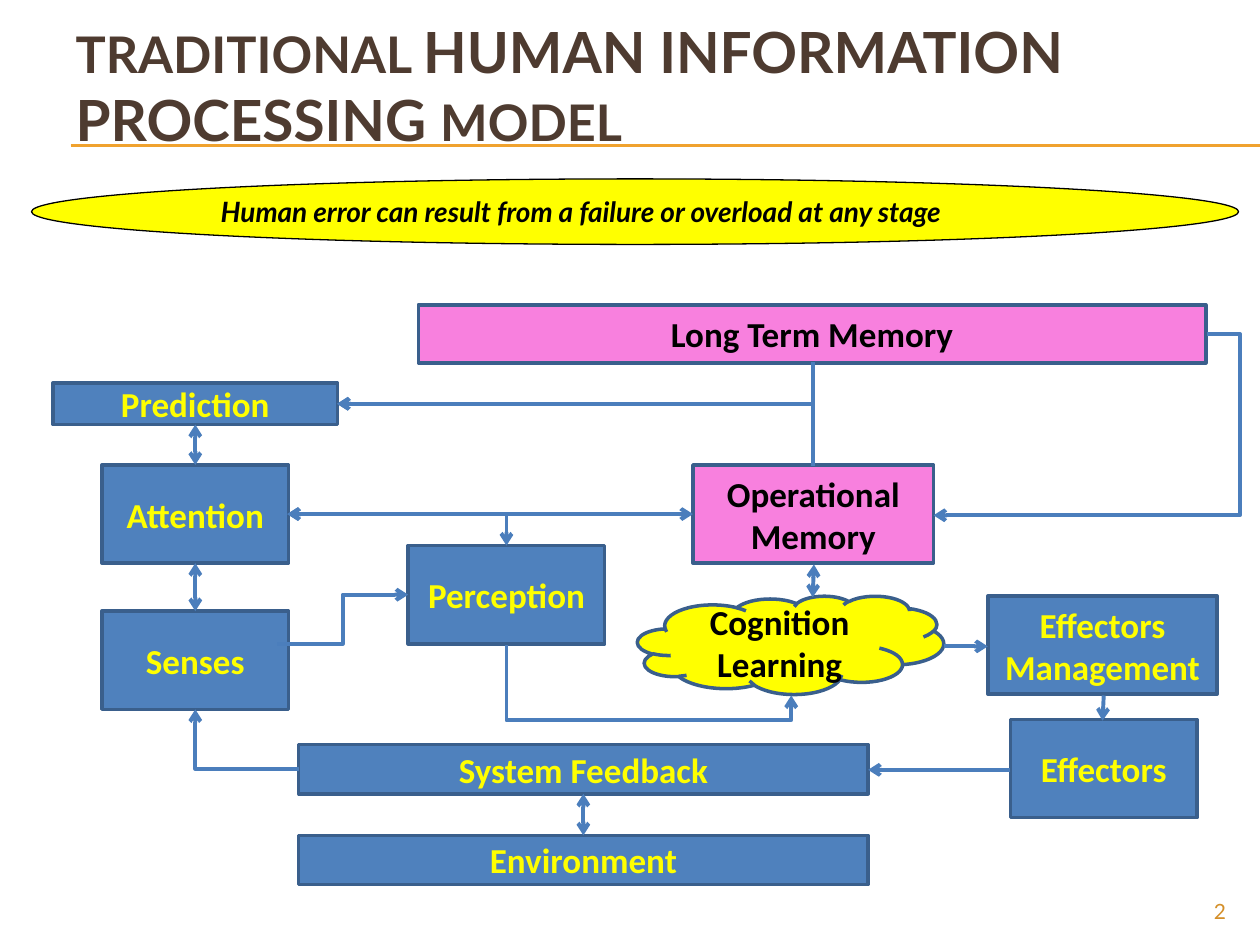
from pptx import Presentation
from pptx.util import Inches, Pt
from pptx.dml.color import RGBColor
from pptx.enum.shapes import MSO_SHAPE as SHAPE, MSO_CONNECTOR as LINK
from pptx.enum.text import PP_ALIGN as ALIGN, MSO_ANCHOR as ANCHOR, MSO_AUTO_SIZE as FIT
from pptx.oxml.ns import qn
from lxml.etree import SubElement

BLUE = RGBColor(0x4F, 0x81, 0xBD)
EDGE = RGBColor(0x3A, 0x5F, 0x8C)
WIRE = RGBColor(0x4B, 0x7E, 0xBC)
PINK = RGBColor(0xF8, 0x80, 0xDE)
YELLOW = RGBColor(0xFF, 0xFF, 0x00)
BLACK = RGBColor(0, 0, 0)
BROWN = RGBColor(0x4E, 0x3B, 0x30)
GOLD = RGBColor(0xF0, 0xA2, 0x2E)
OCHRE = RGBColor(0xD4, 0x8F, 0x29)

TITLE = [("TRADITIONAL ", 28.8), ("HUMAN INFORMATION PROCESSING ", 32.4), ("MODEL", 28.8)]
NOTE = "Human error can result from a failure or overload at any stage"

BOXES = [
    ("Senses", 0.81, 4.85, 1.48, 0.78, BLUE),
    ("Perception", 3.24, 4.33, 1.56, 0.78, BLUE),
    ("Cognition\nLearning", 5.06, 4.73, 2.43, 0.78, YELLOW),
    ("Attention", 0.81, 3.69, 1.48, 0.78, BLUE),
    ("Operational\nMemory", 5.5, 3.69, 1.91, 0.78, PINK),
    ("Long Term Memory", 3.32, 2.42, 6.25, 0.46, PINK),
    ("Effectors\nManagement", 7.84, 4.73, 1.82, 0.78, BLUE),
    ("Effectors", 8.02, 5.71, 1.48, 0.78, BLUE),
    ("System Feedback", 2.37, 5.91, 4.52, 0.39, BLUE),
    ("Environment", 2.37, 6.63, 4.52, 0.39, BLUE),
    ("Prediction", 0.42, 3.04, 2.26, 0.33, BLUE),
]

ONE, BOTH = ("tail",), ("head", "tail")
ARROWS = [
    (7.49, 5.13, 7.84, 5.13, ONE),
    (2.28, 4.08, 5.5, 4.08, BOTH),
    (6.45, 4.74, 6.46, 4.48, BOTH),
    (1.55, 4.47, 1.55, 4.85, BOTH),
    (8.76, 5.52, 8.75, 5.72, ONE),
    (8.02, 6.11, 6.89, 6.11, ONE),
    (4.63, 6.63, 4.63, 6.3, BOTH),
    (1.55, 3.69, 1.55, 3.37, BOTH),
]

BENDS = [
    (1.55, 5.63, 0.82, 0.47, dict(turn=180)),
    (2.28, 4.08, 1.74, 0.25, dict(ends=BOTH)),
    (7.41, 2.65, 2.17, 1.44, dict(flip="h", mid=-0.12)),
    (4.95, 4.19, 0.4, 2.26, dict(turn=270, flip="h", mid=1.49)),
    (2.2, 4.72, 1.04, 0.39, dict(flip="v", mid=0.5)),
    (4.32, 1.56, 0.49, 3.78, dict(turn=270, flip="v")),
    (4.4, 1.15, 0.33, 3.78, dict(turn=90)),
]


def write(frame, runs, font="Calibri", color=BLACK, bold=True, italic=False,
          align=ALIGN.CENTER, anchor=ANCHOR.MIDDLE):
    frame.word_wrap = True
    frame.auto_size = FIT.NONE
    frame.vertical_anchor = anchor
    para = frame.paragraphs[0]
    para.alignment = align
    for text, size in runs:
        for i, part in enumerate(text.split("\n")):
            if i:
                para = frame.add_paragraph()
                para.alignment = align
            run = para.add_run()
            run.text = part
            face = run.font
            face.name, face.size = font, Pt(size)
            face.bold, face.italic = bold, italic
            face.color.rgb = color


def block(slide, kind, box, fill, edge, width):
    shape = slide.shapes.add_shape(kind, *map(Inches, box))
    shape.shadow.inherit = False
    shape.fill.solid()
    shape.fill.fore_color.rgb = fill
    shape.line.color.rgb = edge
    shape.line.width = Pt(width)
    return shape.text_frame


def link(slide, kind, pts, color=WIRE, width=2.25, ends=()):
    wire = slide.shapes.add_connector(kind, *map(Inches, pts))
    wire.line.color.rgb = color
    wire.line.width = Pt(width)
    props = wire._element.spPr
    for end in ends:
        SubElement(props.find(qn("a:ln")), qn(f"a:{end}End"), type="arrow")
    SubElement(props, qn("a:effectLst"))
    return props


def bend(slide, x, y, w, h, turn=0, flip="", mid=None, ends=ONE):
    x1, x2 = (x + w, x) if flip == "h" else (x, x + w)
    y1, y2 = (y + h, y) if flip == "v" else (y, y + h)
    props = link(slide, LINK.ELBOW, (x1, y1, x2, y2), ends=ends)
    props.find(qn("a:xfrm")).set("rot", str(turn * 60000))
    geom = props.find(qn("a:prstGeom"))
    if mid is None:
        geom.set("prst", "bentConnector2")
    else:
        SubElement(geom.find(qn("a:avLst")), qn("a:gd"), name="adj1",
                   fmla=f"val {round(mid * 100000)}")


def main():
    deck = Presentation()
    deck.slide_width, deck.slide_height = Inches(10), Inches(7.5)
    slide = deck.slides.add_slide(deck.slide_layouts[5])

    for y in (1.15, 1.16):
        link(slide, LINK.STRAIGHT, (0.56, y, 10, y), GOLD, 0.75)

    title = slide.shapes.title
    title.left, title.top, title.width, title.height = map(Inches, (0.5, 0.17, 9, 1))
    write(title.text_frame, TITLE, font="Lato", color=BROWN, align=ALIGN.LEFT)

    page = slide.shapes.add_textbox(*map(Inches, (9, 7.08, 0.83, 0.27)))
    write(page.text_frame, [("2", 12)], font="Lato", color=OCHRE, bold=False,
          align=ALIGN.RIGHT, anchor=ANCHOR.TOP)

    for text, x, y, w, h, fill in BOXES:
        kind = SHAPE.CLOUD if fill == YELLOW else SHAPE.RECTANGLE
        frame = block(slide, kind, (x, y, w, h), fill, EDGE, 2)
        write(frame, [(text, 20)], color=YELLOW if fill == BLUE else BLACK)

    for *pts, ends in ARROWS:
        link(slide, LINK.STRAIGHT, pts, ends=ends)
    for x, y, w, h, form in BENDS:
        bend(slide, x, y, w, h, **form)

    frame = block(slide, SHAPE.OVAL, (0.25, 1.42, 9.58, 0.52), YELLOW, BLACK, 0.75)
    write(frame, [(NOTE, 16)], font="Lato", italic=True, align=ALIGN.LEFT, anchor=ANCHOR.TOP)

    deck.save("out.pptx")


if __name__ == "__main__":
    main()
